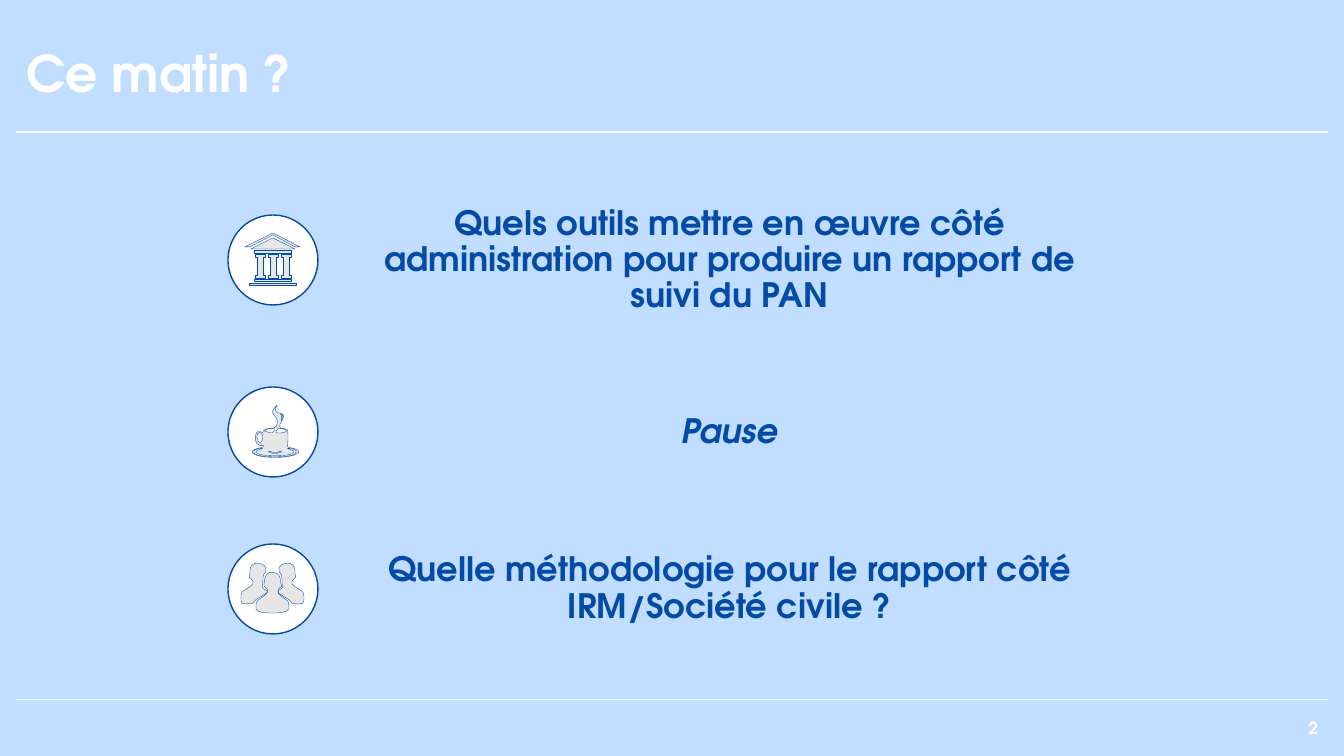
import pptx
import pptx.util
import pptx.dml.color
import pptx.enum.shapes
import pptx.enum.text
import pptx.oxml
import pptx.oxml.ns

PX = 914400 / 100.8
FINE = 10
FONT = "TeX Gyre Adventor"
SKY = pptx.dml.color.RGBColor(0xC1, 0xDD, 0xFF)
BLUE = pptx.dml.color.RGBColor(0x03, 0x4B, 0xA6)
GREY = pptx.dml.color.RGBColor(0xE7, 0xE6, 0xE6)
WHITE = pptx.dml.color.RGBColor(0xFF, 0xFF, 0xFF)
ALIGN = pptx.enum.text.PP_ALIGN
DISC = 90


def px(*vals):
    """Turn px lengths into EMU."""
    return [pptx.util.Emu(round(v * PX)) for v in vals]


def write(shape, text, size=24, color=BLUE, italic=False,
          align=ALIGN.CENTER, lead=0.9, before=0):
    """Put one formatted paragraph in a shape."""
    frame = shape.text_frame
    frame.word_wrap = True
    frame.auto_size = pptx.enum.text.MSO_AUTO_SIZE.NONE
    frame.vertical_anchor = pptx.enum.text.MSO_ANCHOR.MIDDLE
    para = frame.paragraphs[0]
    para.alignment = align
    para.line_spacing = lead
    para.space_before = pptx.util.Pt(before)
    run = para.add_run()
    run.text = text
    font = run.font
    font.name, font.size = FONT, pptx.util.Pt(size)
    font.bold, font.italic = True, italic
    font.color.rgb = color


def paint(shape, fill, width):
    """Give a shape its fill and blue outline."""
    shape.shadow.inherit = False
    shape.fill.solid()
    shape.fill.fore_color.rgb = fill
    shape.line.color.rgb = BLUE
    shape.line.width = pptx.util.Pt(width)


def rule(slide, left, top, width):
    """Draw a thin white line across."""
    line = slide.shapes.add_connector(
        pptx.enum.shapes.MSO_CONNECTOR.STRAIGHT,
        *px(left, top, left + width, top))
    line.line.color.rgb = WHITE
    line.line.width = pptx.util.Pt(0.75)
    props = line._element.spPr
    props.append(pptx.oxml.parse_xml(
        "<a:effectLst %s/>" % pptx.oxml.ns.nsdecls("a")))


def bar(left, top, width, height):
    """Return the corners of a bar."""
    right, low = left + width, top + height
    return [(left, top), (right, top), (right, low), (left, low)]


def soften(loop):
    """Cut the corners of a closed loop twice."""
    for _ in range(2):
        pairs = zip(loop, loop[1:] + loop[:1])
        loop = [(a[0] + (b[0] - a[0]) * t, a[1] + (b[1] - a[1]) * t)
                for a, b in pairs for t in (0.25, 0.75)]
    return loop


def temple():
    """Return the loops of the temple icon."""
    post = [(0, 39), (10, 39), (10, 42), (8, 42), (8, 60), (10, 60),
            (10, 63), (0, 63), (0, 60), (2, 60), (2, 42), (0, 42)]
    posts = [[(x + 27 + 13 * i, y) for x, y in post] for i in range(3)]
    gable = [(45, 23), (67, 34), (23, 34)]
    roof = [(45, 18), (72, 32), (67, 32), (45, 20), (22, 32), (17, 32)]
    bars = [bar(21, 68, 47, 2), bar(26, 64, 37, 2), bar(26, 35, 37, 3)]
    return bars + posts + [gable, roof]


def cup():
    """Return the loops of the steaming cup icon."""
    edge = [(50, 17), (47, 22), (48, 25), (55, 27), (56, 30), (50, 41),
            (59, 42), (60, 44), (60, 57), (59, 60), (68, 62), (72, 65),
            (65, 69), (47, 71), (29, 69), (23, 65), (27, 62), (36, 60),
            (35, 58), (33, 59), (29, 57), (27, 52), (28, 46), (31, 44),
            (35, 46), (35, 44), (38, 42), (48, 41), (50, 33), (45, 27),
            (44, 24)]
    ear = [(31, 45), (29, 48), (29, 51), (30, 54), (32, 56), (34, 54),
           (35, 50), (34, 47)]
    dish = [(36, 61), (28, 62), (25, 65), (30, 69), (47, 70), (64, 69),
            (69, 65), (66, 62), (58, 61), (64, 63), (67, 65), (62, 68),
            (47, 69), (32, 68), (27, 65), (30, 63)]
    foot = [(41, 64), (47, 66), (53, 64), (54, 65), (47, 67), (40, 65)]
    rim = [(47, 41), (39, 42), (36, 44), (39, 45), (45, 46)]
    brim = [(50, 41), (47, 46), (55, 46), (59, 44), (56, 42)]
    wisp = [(52, 27), (54, 29), (53, 35), (55, 28)]
    return [soften(p) for p in (edge, ear, dish, foot, rim, brim, wisp)]


def crowd():
    """Return the loops of the three people icon."""
    front = [(45, 28), (50, 30), (52, 33), (53, 40), (54, 42), (52, 44),
             (50, 46), (50, 50), (59, 56), (61, 59), (61, 69), (28, 69),
             (28, 59), (30, 56), (39, 50), (40, 46), (38, 44), (36, 42),
             (36, 40), (37, 33), (40, 29)]
    left = [(30, 19), (36, 21), (38, 24), (38, 28), (35, 31), (35, 40),
            (34, 43), (36, 45), (39, 47), (38, 50), (27, 56), (25, 60),
            (15, 60), (13, 58), (13, 50), (15, 47), (25, 41), (25, 37),
            (23, 35), (21, 33), (22, 31), (22, 24), (25, 20)]
    right = [(89 - x, y) for x, y in left]
    return [soften(p) for p in (front, left, right)]


def badge(slide, left, top, loops):
    """Draw a white disc with an icon in it."""
    disc = slide.shapes.add_shape(pptx.enum.shapes.MSO_SHAPE.OVAL,
                                  *px(left, top, DISC, DISC))
    paint(disc, WHITE, 1)
    paths = [[((left + x) * FINE, (top + y) * FINE) for x, y in loop]
             for loop in loops]
    pen = slide.shapes.build_freeform(*paths[0][0], scale=PX / FINE)
    pen.add_line_segments(paths[0][1:], close=True)
    for path in paths[1:]:
        pen.move_to(*path[0])
        pen.add_line_segments(path[1:], close=True)
    paint(pen.convert_to_shape(), GREY, 0.25)


def item(slide, left, mid, high, loops, text, italic=False):
    """Place a badge and its text around a middle height."""
    badge(slide, left, mid - DISC // 2, loops)
    box = slide.shapes.add_textbox(
        *px(left + 115, mid - high // 2, 773, high))
    write(box, text, italic=italic, before=10)


def head(slide, left, top, width):
    """Place the title and the line below it."""
    title = slide.shapes.title
    title.left, title.top, title.width, title.height = px(left, top, 992, 89)
    write(title, "Ce matin ?", size=36, color=WHITE, align=ALIGN.LEFT)
    rule(slide, left, top + 100, width)


def foot(slide, left, top, width):
    """Place the lower line and the page number."""
    rule(slide, left, top, width)
    box = slide.shapes.add_textbox(*px(left + width - 302, top + 8, 302, 40))
    write(box, "2", size=12, color=WHITE, align=ALIGN.RIGHT, lead=1)


def main():
    """Build the slide and save it."""
    deck = pptx.Presentation()
    deck.slide_width, deck.slide_height = px(1344, 756)
    slide = deck.slides.add_slide(deck.slide_layouts[5])
    slide.background.fill.solid()
    slide.background.fill.fore_color.rgb = SKY
    head(slide, 16, 32, 1312)
    item(slide, 228, 260, 147, temple(),
         "Quels outils mettre en œuvre côté administration "
         "pour produire un rapport de suivi du PAN")
    item(slide, 228, 432, 89, cup(), "Pause", italic=True)
    item(slide, 228, 589, 116, crowd(),
         "Quelle méthodologie pour le rapport côté IRM/Société civile ?")
    foot(slide, 16, 700, 1312)
    deck.save("out.pptx")


if __name__ == "__main__":
    main()
